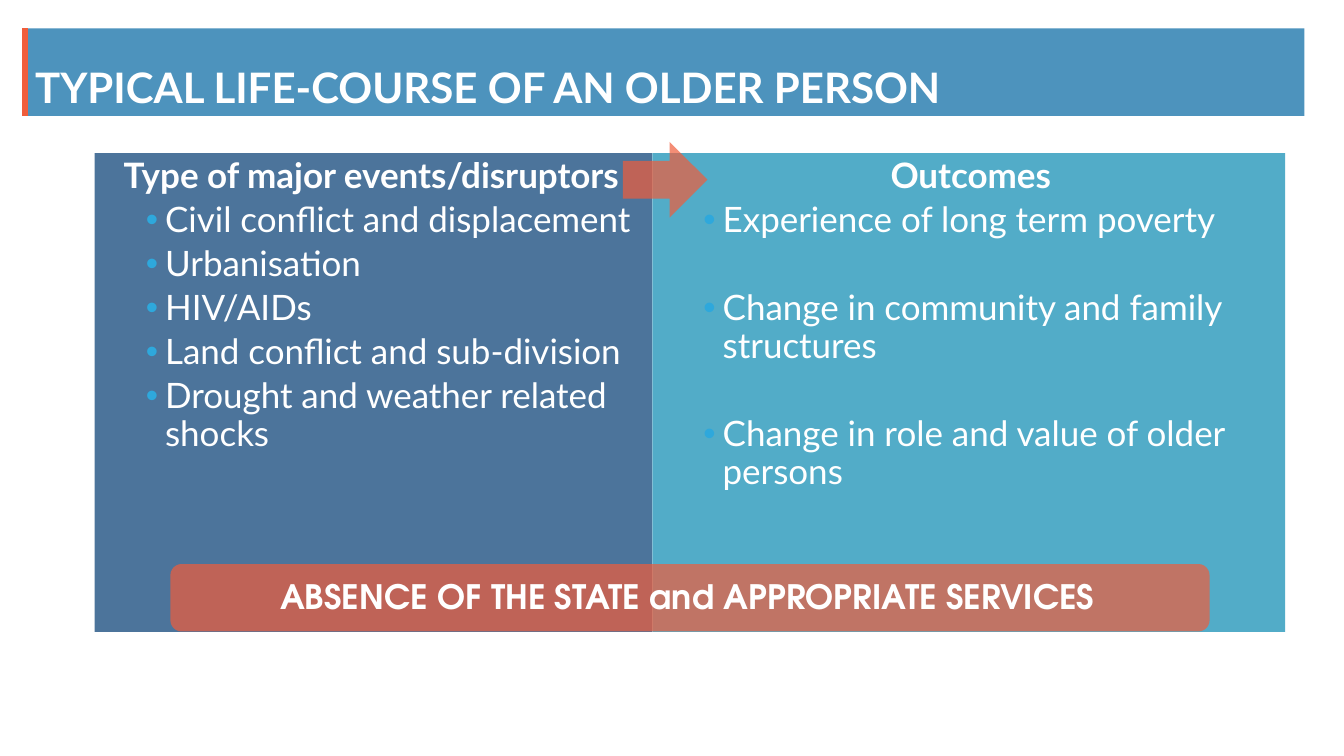
import lxml.etree
import pptx
import pptx.dml.color
import pptx.enum.shapes
import pptx.enum.text
import pptx.oxml.ns
import pptx.util

Pt = pptx.util.Pt
SHAPES = pptx.enum.shapes.MSO_SHAPE
CENTER = pptx.enum.text.PP_ALIGN.CENTER
BOTTOM = pptx.enum.text.MSO_ANCHOR.BOTTOM
qn = pptx.oxml.ns.qn

WHITE = "FFFFFF"
ACCENT = "F05D3B"
BULLET = "2EA8DC"
OPACITY = 70
LINE_SPACING = 0.9
BODY_SIZE = 25
ITEM_GAP = 4.5
EMPTY_LINE = 31.5

EVENTS = [
    "Civil conflict and displacement",
    "Urbanisation",
    "HIV/AIDs",
    "Land conflict and sub-division",
    "Drought and weather related shocks",
]
OUTCOMES = [
    "Experience of long term poverty",
    "Change in community and family structures",
    "Change in role and value of older persons",
]


def rgb(code):
    return pptx.dml.color.RGBColor.from_string(code)


def add_panel(slide, kind, box, color):
    """Add a borderless, partly transparent shape."""
    panel = slide.shapes.add_shape(kind, *map(Pt, box))
    panel.shadow.inherit = False
    panel.line.fill.background()
    panel.fill.solid()
    panel.fill.fore_color.rgb = rgb(color)
    tint = panel.fill._xPr.find(".//" + qn("a:srgbClr"))
    lxml.etree.SubElement(tint, qn("a:alpha"), val=str(OPACITY * 1000))
    return panel


def write(paragraph, text, size, bold=False, font="Lato"):
    paragraph.text = text
    paragraph.line_spacing = LINE_SPACING
    paragraph.font.size = Pt(size)
    paragraph.font.bold = bold
    paragraph.font.name = font
    paragraph.font.color.rgb = rgb(WHITE)


def add_label(slide, box, text, size, font="Lato", anchor=None):
    frame = slide.shapes.add_textbox(*map(Pt, box)).text_frame
    frame.word_wrap = True
    frame.vertical_anchor = anchor
    write(frame.paragraphs[0], text, size, True, font)


def set_indent(paragraph, margin, hanging=0):
    properties = paragraph._p.get_or_add_pPr()
    properties.set("marL", str(Pt(margin)))
    properties.set("indent", str(-Pt(hanging)))
    return properties


def add_bullet(paragraph):
    properties = set_indent(paragraph, 43.2, 13.7)
    color = lxml.etree.Element(qn("a:buClr"))
    lxml.etree.SubElement(color, qn("a:srgbClr"), val=BULLET)
    font = lxml.etree.Element(qn("a:buFont"), typeface="Arial")
    char = lxml.etree.Element(qn("a:buChar"), char="•")
    position = list(properties).index(properties.find(qn("a:defRPr")))
    properties[position:position] = [color, font, char]


def add_header(slide, box, title):
    left, top, width, height = box
    add_panel(slide, SHAPES.RECTANGLE, box, "0266A2")
    edge = slide.shapes.add_connector(
        pptx.enum.shapes.MSO_CONNECTOR.STRAIGHT,
        Pt(left), Pt(top), Pt(left), Pt(top + height))
    edge.line.color.rgb = rgb(ACCENT)
    edge.line.width = Pt(4)
    lxml.etree.SubElement(edge._element.spPr, qn("a:effectLst"))
    add_label(slide, (left, top + 1.4, width, height), title, 30, anchor=BOTTOM)


def add_column(slide, box, color, heading, items, item_gap=ITEM_GAP):
    frame = add_panel(slide, SHAPES.RECTANGLE, box, color).text_frame
    frame.word_wrap = True
    frame.vertical_anchor = pptx.enum.text.MSO_ANCHOR.TOP
    heading_line = frame.paragraphs[0]
    write(heading_line, heading, BODY_SIZE, True)
    heading_line.alignment = CENTER
    set_indent(heading_line, 2.9)
    for number, item in enumerate(items):
        line = frame.add_paragraph()
        write(line, item, BODY_SIZE)
        line.alignment = pptx.enum.text.PP_ALIGN.LEFT
        line.space_before = Pt(item_gap if number else ITEM_GAP)
        add_bullet(line)


def add_banner(slide, box, text):
    left, top, width, height = box
    add_panel(slide, SHAPES.ROUNDED_RECTANGLE, box, ACCENT)
    add_label(slide, (left + 71.3, top + 8, 612, 33), text, 24,
              "TeX Gyre Adventor")


def add_life_course(slide, box, split):
    """Place both columns, the arrow over their border and the banner."""
    left, top, width, height = box
    border = left + split
    add_column(slide, (left, top, split, height), "003971",
               "Type of major events/disruptors ", EVENTS)
    add_column(slide, (border, top, width - split, height), "0989B1",
               "Outcomes", OUTCOMES, ITEM_GAP + EMPTY_LINE)
    add_panel(slide, SHAPES.RIGHT_ARROW, (border - 21, top - 8, 60.5, 54), ACCENT)
    add_banner(slide, (left + 54, top + height - 48.5, 742.3, 48.2),
               "ABSENCE OF THE STATE and APPROPRIATE SERVICES")


def main():
    deck = pptx.Presentation()
    deck.slide_width, deck.slide_height = Pt(960), Pt(540)
    slide = deck.slides.add_slide(deck.slide_layouts[6])
    add_header(slide, (18, 20.2, 913.7, 62.6),
               "TYPICAL LIFE-COURSE OF AN OLDER PERSON")
    add_life_course(slide, (67.7, 109.4, 850.3, 342), 398.2)
    deck.save("out.pptx")


if __name__ == "__main__":
    main()
